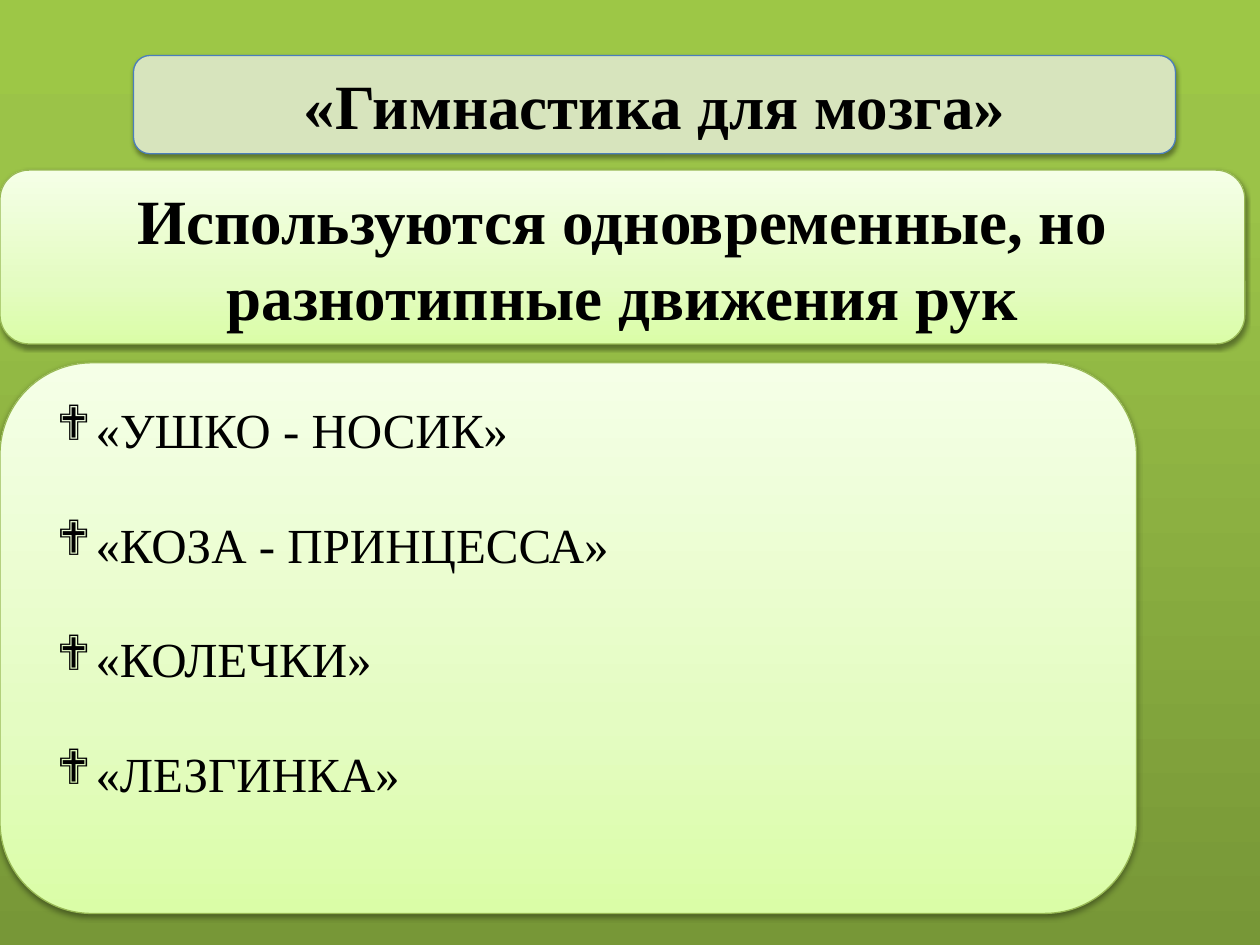
from lxml.etree import SubElement
from pptx import Presentation
from pptx.dml.color import RGBColor
from pptx.enum.shapes import MSO_SHAPE
from pptx.enum.text import MSO_ANCHOR, PP_ALIGN
from pptx.oxml import parse_xml
from pptx.oxml.ns import nsdecls, qn
from pptx.util import Inches, Pt

COLORS = {"text": "000000", "title": "D7E4BD", "title_line": "4B7EBC", "panel_line": "98B955"}
BACKDROP = [(0, "779737"), (80, "9BC348"), (100, "9DC746")]
PANEL = [(0, "DAFDA7"), (35, "E4FCC2"), (100, "F5FFE7")]
EXERCISES = ["«УШКО - НОСИК»", "«КОЗА - ПРИНЦЕССА»", "«КОЛЕЧКИ»", "«ЛЕЗГИНКА»"]


def write(p, text, size=36, bold=True, align=PP_ALIGN.CENTER):
    p.alignment = align
    r = p.add_run()
    r.text = text
    r.font.name = "Times New Roman"
    r.font.size = Pt(size)
    r.font.bold = bold
    r.font.color.rgb = RGBColor.from_string(COLORS["text"])


def gradient(stops):
    """Return a gradient fill that runs from the bottom to the top."""
    gs = "".join(f'<a:gs pos="{pos * 1000}"><a:srgbClr val="{color}"/></a:gs>' for pos, color in stops)
    return parse_xml(f'<a:gradFill {nsdecls("a")} rotWithShape="1"><a:gsLst>{gs}</a:gsLst>'
                     '<a:lin ang="16200000" scaled="0"/></a:gradFill>')


def drop_shadow():
    return parse_xml(f'<a:effectLst {nsdecls("a")}><a:outerShdw blurRad="{Pt(3.1)}" dist="{Pt(1.6)}" '
                     'dir="5400000" rotWithShape="0"><a:srgbClr val="000000"><a:alpha val="38000"/>'
                     '</a:srgbClr></a:outerShdw></a:effectLst>')


class SlideBuilder:
    def __init__(self, slide):
        self.s = slide

    def backdrop(self, width, height):
        sp = self.s.shapes.add_shape(MSO_SHAPE.RECTANGLE, 0, 0, width, height)
        sp.shadow.inherit = False
        sp.line.fill.background()
        sp._element.spPr.find(qn("a:prstGeom")).addnext(gradient(BACKDROP))

    def panel(self, box, line, text=None, fill=None):
        """Add a rounded box with a plain fill, or the panel gradient if none is given."""
        sp = self.s.shapes.add_shape(MSO_SHAPE.ROUNDED_RECTANGLE, *map(Inches, box))
        sp.line.color.rgb = RGBColor.from_string(COLORS[line])
        sp.line.width = Pt(0.75)
        if fill:
            sp.fill.solid()
            sp.fill.fore_color.rgb = RGBColor.from_string(COLORS[fill])
        else:
            sp._element.spPr.find(qn("a:prstGeom")).addnext(gradient(PANEL))
        sp._element.spPr.append(drop_shadow())
        if text:
            tf = sp.text_frame
            tf.word_wrap = True
            tf.vertical_anchor = MSO_ANCHOR.MIDDLE
            write(tf.paragraphs[0], text)

    def bullets(self, box, items):
        tf = self.s.shapes.add_textbox(*map(Inches, box)).text_frame
        tf.word_wrap = True
        for i, item in enumerate(items):
            p = tf.add_paragraph() if i else tf.paragraphs[0]
            write(p, item, size=28, bold=False, align=PP_ALIGN.LEFT)
            p.space_after = Pt(32)
            pPr = p._p.get_or_add_pPr()
            pPr.set("marL", str(Inches(0.31)))
            pPr.set("indent", str(Inches(-0.31)))
            SubElement(pPr, qn("a:buFont"), typeface="Wingdings")
            SubElement(pPr, qn("a:buChar"), char="❖")


def main():
    prs = Presentation()
    prs.slide_width, prs.slide_height = Inches(10), Inches(7.5)
    b = SlideBuilder(prs.slides.add_slide(prs.slide_layouts[6]))
    b.backdrop(prs.slide_width, prs.slide_height)
    b.panel((1.06, 0.44, 8.27, 0.78), "title_line", "«Гимнастика для мозга»", fill="title")
    b.panel((0, 1.35, 9.88, 1.38), "panel_line",
            "Используются одновременные, но разнотипные движения рук")
    b.panel((0, 2.88, 9.02, 4.37), "panel_line")
    b.bullets((0.35, 3.12, 7.32, 3.4), EXERCISES)
    prs.save("out.pptx")


if __name__ == "__main__":
    main()
